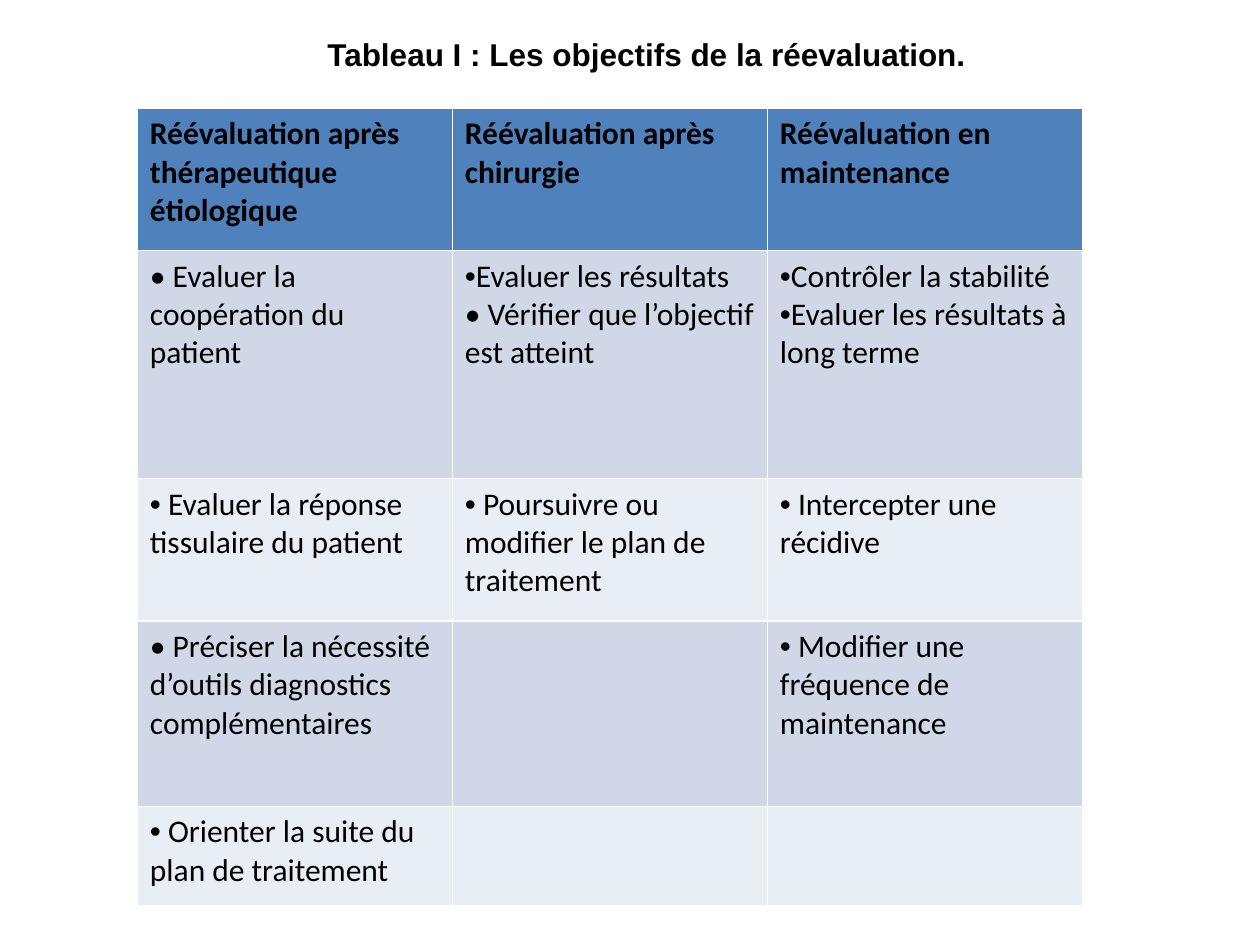
from dataclasses import dataclass

from pptx import Presentation
from pptx.dml.color import RGBColor as Color
from pptx.enum.text import MSO_AUTO_SIZE as AutoSize
from pptx.oxml.ns import qn
from pptx.util import Inches, Pt
from lxml.etree import SubElement

TITLE = "Tableau I : Les objectifs de la réevaluation."
HEADERS = [
    "Réévaluation après thérapeutique étiologique",
    "Réévaluation après chirurgie",
    "Réévaluation en maintenance",
]
OBJECTIVES = [
    [
        ["• Evaluer la coopération du patient"],
        ["Evaluer les résultats", "• Vérifier que l’objectif est atteint"],
        ["Contrôler la stabilité", "Evaluer les résultats à long terme"],
    ],
    [
        [" Evaluer la réponse tissulaire du patient"],
        [" Poursuivre ou modifier le plan de traitement"],
        [" Intercepter une récidive"],
    ],
    [
        ["• Préciser la nécessité d’outils diagnostics complémentaires"],
        [],
        [" Modifier une fréquence de maintenance"],
    ],
    [[" Orienter la suite du plan de traitement"], [], []],
]
COLUMN_WIDTH = 2.5
ROW_HEIGHTS = [1.13, 1.81, 1.13, 1.47, 0.79]


@dataclass(frozen=True)
class Theme:
    text: str = "000000"
    header: str = "4F81BD"
    bands: tuple = ("D0D8E8", "E9EDF4")
    title_font: str = "Arial"
    table_font: str = "Calibri"
    size: int = 18


THEME = Theme()


def style_paragraph(paragraph, text, font_name, bold):
    paragraph.text = text
    font = paragraph.font
    font.name = font_name
    font.size = Pt(THEME.size)
    font.bold = bold
    font.color.rgb = Color.from_string(THEME.text)


def add_bullet(paragraph):
    properties = paragraph._p.get_or_add_pPr()
    properties.set("marL", "0")
    properties.set("indent", "0")
    bullet_font = properties.makeelement(qn("a:buFont"), {"typeface": "Arial"})
    bullet = properties.makeelement(qn("a:buChar"), {"char": "•"})
    properties.insert(0, bullet_font)
    properties.insert(1, bullet)


def fill_cell(cell, lines, color, header):
    cell.fill.solid()
    cell.fill.fore_color.rgb = Color.from_string(color)
    frame = cell.text_frame
    for index, line in enumerate(lines):
        paragraph = frame.add_paragraph() if index else frame.paragraphs[0]
        style_paragraph(paragraph, line, THEME.table_font, header)
        if not header and not line.startswith("•"):
            add_bullet(paragraph)


def add_objectives_table(slide):
    rows = [[[header] for header in HEADERS], *OBJECTIVES]
    table = slide.shapes.add_table(
        len(rows), len(HEADERS), Inches(1.09), Inches(0.86),
        Inches(COLUMN_WIDTH * len(HEADERS)), Inches(sum(ROW_HEIGHTS)),
    ).table
    for column in table.columns:
        column.width = Inches(COLUMN_WIDTH)
    for row_index, (row, height) in enumerate(zip(rows, ROW_HEIGHTS)):
        table.rows[row_index].height = Inches(height)
        header = row_index == 0
        color = THEME.header if header else THEME.bands[(row_index - 1) % 2]
        for column_index, lines in enumerate(row):
            fill_cell(table.cell(row_index, column_index), lines, color, header)


def add_title(slide):
    box = slide.shapes.add_textbox(Inches(2.5), Inches(0.23), Inches(5.32), Inches(0.4))
    frame = box.text_frame
    frame.word_wrap = False
    frame.auto_size = AutoSize.SHAPE_TO_FIT_TEXT
    style_paragraph(frame.paragraphs[0], TITLE, THEME.title_font, True)


def main():
    presentation = Presentation()
    presentation.slide_width = Inches(10)
    presentation.slide_height = Inches(7.5)
    slide = presentation.slides.add_slide(presentation.slide_layouts[6])
    add_objectives_table(slide)
    add_title(slide)
    presentation.save("out.pptx")


if __name__ == "__main__":
    main()
